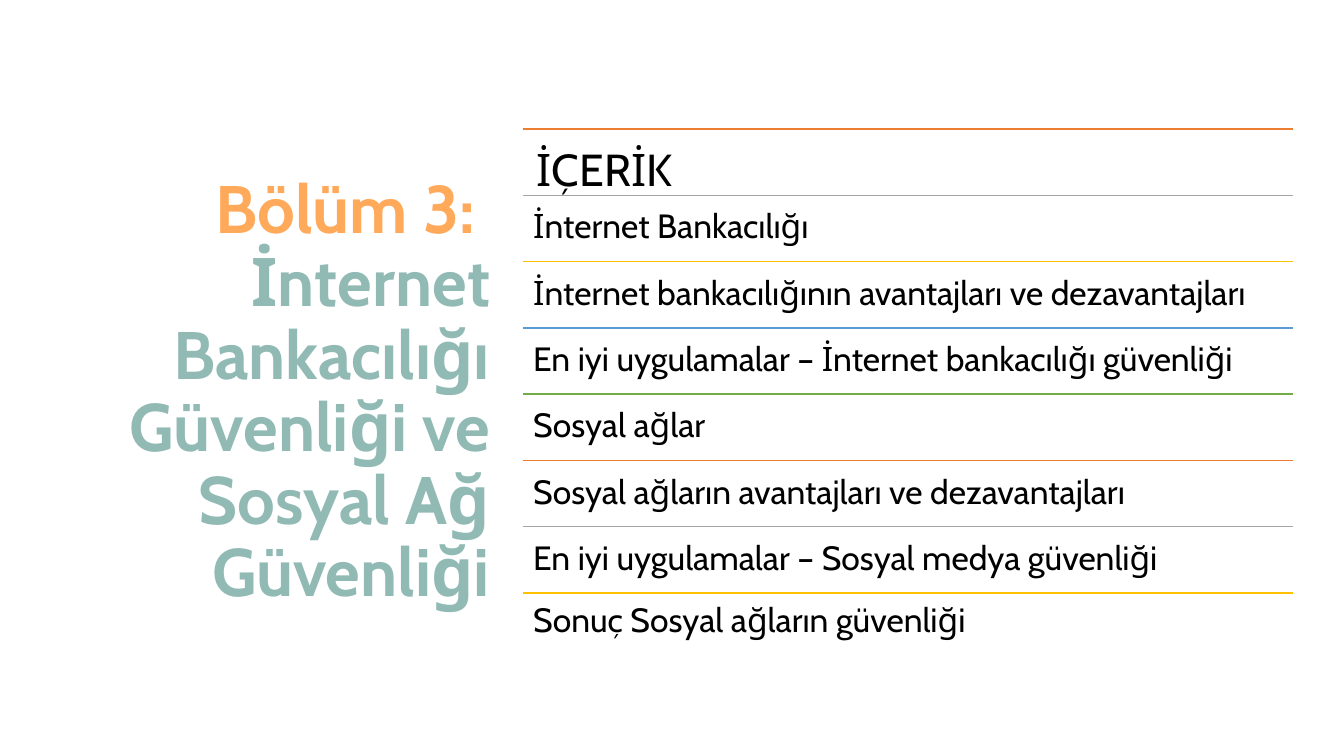
from pptx import Presentation
from pptx.dml.color import RGBColor as Color
from pptx.enum.shapes import MSO_CONNECTOR as Link
from pptx.enum.text import MSO_ANCHOR as Anchor, PP_ALIGN as Align
from pptx.oxml.ns import qn
from pptx.util import Inches, Pt
from lxml.etree import SubElement as Sub

TITLE = [
    ("Bölüm 3: ", "orange"),
    ("İnternet Bankacılığı Güvenliği ve Sosyal Ağ Güvenliği", "teal"),
]
HEAD = "İÇERİK"
TOPICS = [
    "İnternet Bankacılığı",
    "İnternet bankacılığının avantajları ve dezavantajları",
    "En iyi uygulamalar – İnternet bankacılığı güvenliği",
    "Sosyal ağlar",
    "Sosyal ağların avantajları ve dezavantajları",
    "En iyi uygulamalar – Sosyal medya güvenliği",
    "Sonuç Sosyal ağların güvenliği",
]
THEME = {
    "font": "Cabin",
    "orange": "FFAA5A",
    "teal": "92BAB5",
    "ink": "000000",
    "rules": ["ED7D31", "A5A5A5", "FFC000", "5B9BD5", "70AD47"],
    "title": 48,
    "head": 32,
    "topic": 24,
    "rule": 1,
}
WIDE, HIGH = 13.33, 7.5
TITLE_BOX = (0.38, 0.85, 4.58, 6.11)
LEFT, TOP, SPAN, BOTTOM = 5.19, 1.28, 7.63, 6.54


def apply(target, values):
    for name, value in values.items():
        setattr(target, name, value)


def add_box(slide, area, pad, anchor):
    frame = slide.shapes.add_textbox(*map(Inches, area)).text_frame
    sides = ("left", "top", "right", "bottom")
    apply(frame, {f"margin_{side}": Inches(pad) for side in sides})
    apply(frame, {"word_wrap": True, "vertical_anchor": anchor})
    return frame.paragraphs[0]


def add_run(para, text, size, color, bold=False):
    run = para.add_run()
    run.text = text
    apply(run.font, {"name": THEME["font"], "size": Pt(THEME[size]), "bold": bold})
    run.font.color.rgb = Color.from_string(THEME[color])


def add_rule(slide, y, color):
    ends = map(Inches, (LEFT, y, LEFT + SPAN, y))
    rule = slide.shapes.add_connector(Link.STRAIGHT, *ends)
    rule.line.width = Pt(THEME["rule"])
    rule.line.color.rgb = Color.from_string(color)
    Sub(rule._element.spPr, qn("a:effectLst"))


def add_title(slide):
    para = add_box(slide, TITLE_BOX, 0.1, Anchor.MIDDLE)
    apply(para, {"alignment": Align.RIGHT, "line_spacing": 0.9})
    for i, (text, color) in enumerate(TITLE):
        if i:
            para.add_line_break()
        add_run(para, text, "title", color, True)


def add_list(slide):
    rows = [(HEAD, "head", 0.13)] + [(text, "topic", 0.1) for text in TOPICS]
    step = (BOTTOM - TOP) / len(rows)
    rules = THEME["rules"]
    for i, (text, size, pad) in enumerate(rows):
        y = TOP + i * step
        add_rule(slide, y, rules[i % len(rules)])
        para = add_box(slide, (LEFT, y, SPAN, step), pad, Anchor.TOP)
        para.line_spacing = 0.9 if i == len(rows) - 1 else 1.0
        add_run(para, text, size, "ink")


def main():
    deck = Presentation()
    apply(deck, {"slide_width": Inches(WIDE), "slide_height": Inches(HIGH)})
    slide = deck.slides.add_slide(deck.slide_layouts[6])
    add_title(slide)
    add_list(slide)
    deck.save("out.pptx")


if __name__ == "__main__":
    main()
